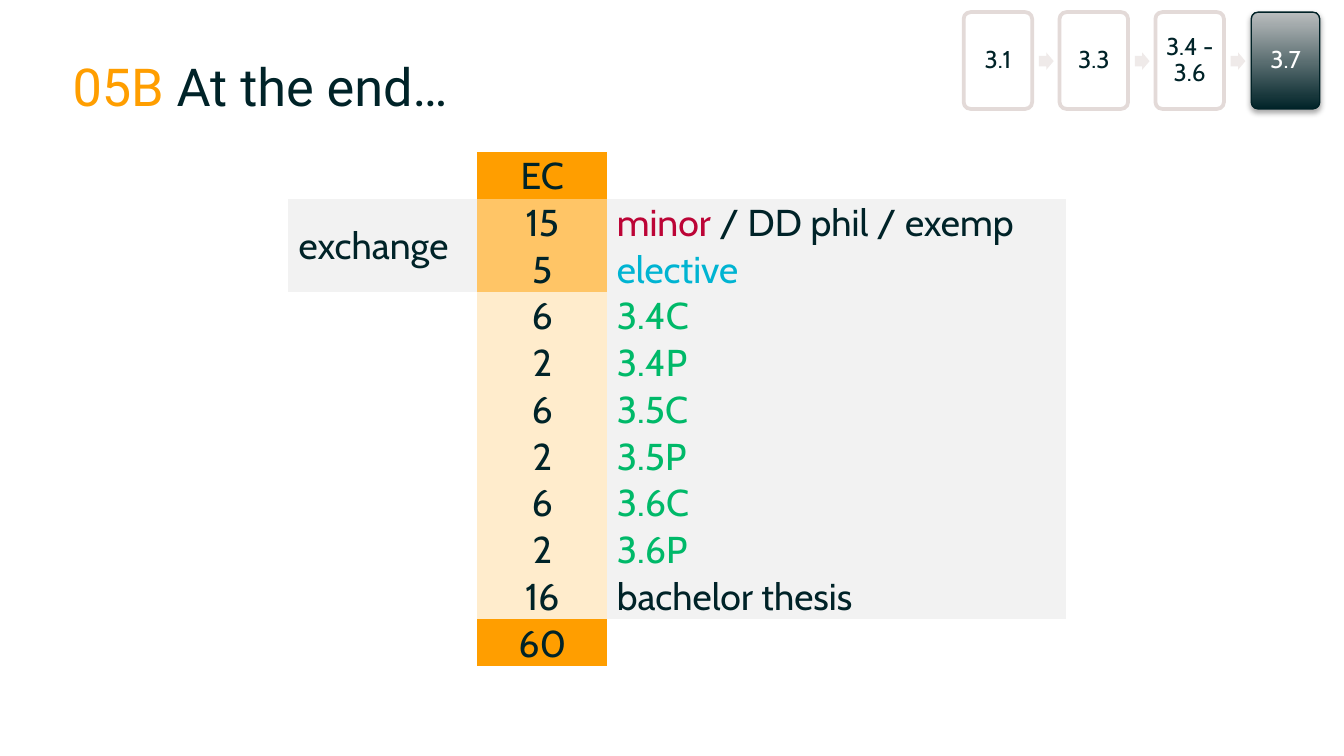
from typing import NamedTuple

from pptx import Presentation
from pptx.dml.color import RGBColor
from pptx.enum.shapes import MSO_SHAPE
from pptx.enum.text import MSO_ANCHOR, PP_ALIGN
from pptx.oxml import parse_xml
from pptx.oxml.ns import nsdecls, qn
from pptx.util import Inches, Pt

ROUNDED = MSO_SHAPE.ROUNDED_RECTANGLE
ARROW = MSO_SHAPE.RIGHT_ARROW
CENTER, LEFT = PP_ALIGN.CENTER, PP_ALIGN.LEFT
MIDDLE, BOTTOM = MSO_ANCHOR.MIDDLE, MSO_ANCHOR.BOTTOM

INK, ORANGE, AMBER, CREAM = "002328", "FF9E00", "FFC566", "FFECCC"
GREY, WHITE = "F2F2F2", "FFFFFF"
RED, BLUE, GREEN = "BC0436", "00B4D2", "00B969"
NO_STYLE_NO_GRID = "{2D5ABB26-0587-4C30-8999-92F81FD0307C}"

SLIDE_WIDTH = 10
STEP_LEFT, LAST_STEP_LEFT = 7.17, 9.31
COLUMN_WIDTHS = (1.41, 0.97, 3.41)
TABLE_HEIGHT = 3.76


class Span(NamedTuple):
    text: str
    color: str = INK


class Credit(NamedTuple):
    points: str
    fill: str
    course: tuple[Span, ...] = ()


STEPS = ("3.1", "3.3", "3.4 - 3.6", "3.7")
CURRENT_STEP = "3.7"

CREDITS = (
    Credit("EC", ORANGE),
    Credit("15", AMBER, (Span("minor", RED), Span(" / DD phil / exemp"))),
    Credit("5", AMBER, (Span("elective", BLUE),)),
    *(
        Credit(points, CREAM, (Span(f"3.{unit}{kind}", GREEN),))
        for unit in (4, 5, 6)
        for points, kind in (("6", "C"), ("2", "P"))
    ),
    Credit("16", CREAM, (Span("bachelor thesis"),)),
    Credit("60", ORANGE),
)


def rgb(color: str) -> RGBColor:
    return RGBColor.from_string(color)


def write(paragraph, spans: tuple[Span, ...], font: str, size: float) -> None:
    for span in spans:
        run = paragraph.add_run()
        run.text = span.text
        run.font.color.rgb = rgb(span.color)
    paragraph.font.name = font
    paragraph.font.size = Pt(size)


def set_margins(target, left: float, top: float, right: float, bottom: float) -> None:
    target.margin_left, target.margin_top = Inches(left), Inches(top)
    target.margin_right, target.margin_bottom = Inches(right), Inches(bottom)


def add_title(slide) -> None:
    frame = slide.shapes.add_textbox(
        Inches(0.54), Inches(0.43), Inches(8.94), Inches(0.63)
    ).text_frame
    frame.word_wrap = True
    set_margins(frame, 0, 0, 0, 0)
    heading = frame.paragraphs[0]
    heading.line_spacing = Pt(32)
    write(heading, (Span("05B", ORANGE), Span(" At the end…")), "Roboto", 28)


def highlight(card) -> None:
    """Give the current step its gradient, dark line and soft shadow."""
    card.fill.gradient()
    card.fill.gradient_angle = 90
    for stop, color in zip(card.fill.gradient_stops, (INK, "BBBEBF")):
        stop.color.rgb = rgb(color)
    card.line.color.rgb = rgb("002227")
    card.line.width = Pt(0.75)
    effects = card._element.spPr.find(qn("a:effectLst"))
    effects.append(parse_xml(
        f'<a:outerShdw {nsdecls("a")} blurRad="{Pt(3.1)}" dist="{Pt(1.8)}" '
        'dir="5400000" rotWithShape="0"><a:srgbClr val="000000">'
        '<a:alpha val="35000"/></a:srgbClr></a:outerShdw>'
    ))


def add_step(slide, left: float, label: str) -> None:
    card = slide.shapes.add_shape(
        ROUNDED, Inches(left), Inches(0.09), Inches(0.51), Inches(0.72)
    )
    card.adjustments[0] = 0.1
    card.shadow.inherit = False
    current = label == CURRENT_STEP
    if current:
        highlight(card)
    else:
        card.fill.solid()
        card.fill.fore_color.rgb = rgb(WHITE)
        card.line.color.rgb = rgb("E3DAD8")
        card.line.width = Pt(2)
    frame = card.text_frame
    frame.word_wrap = True
    frame.vertical_anchor = MIDDLE
    set_margins(frame, 0.05, 0.05, 0.05, 0.05)
    paragraph = frame.paragraphs[0]
    paragraph.alignment = CENTER
    paragraph.line_spacing = 0.9
    write(paragraph, (Span(label, WHITE if current else INK),), "Cabin", 13)


def add_arrow(slide, left: float) -> None:
    arrow = slide.shapes.add_shape(
        ARROW, Inches(left), Inches(0.39), Inches(0.11), Inches(0.13)
    )
    arrow.adjustments[0] = 0.6
    arrow.shadow.inherit = False
    arrow.fill.solid()
    arrow.fill.fore_color.rgb = rgb("EFEAE9")
    arrow.line.fill.background()


def fill_cell(cell, spans: tuple[Span, ...], fill: str, align=CENTER,
              anchor=MIDDLE, left: float = 0.01, right: float = 0.01) -> None:
    set_margins(cell, left, 0.01, right, 0)
    cell.margin_top = Pt(1)
    cell.vertical_anchor = anchor
    paragraph = cell.text_frame.paragraphs[0]
    paragraph.alignment = align
    write(paragraph, spans, "Cabin", 20)
    if spans:
        cell.fill.solid()
        cell.fill.fore_color.rgb = rgb(fill)
    else:
        cell.fill.background()


def add_credit_table(slide) -> None:
    table = slide.shapes.add_table(
        len(CREDITS), len(COLUMN_WIDTHS), Inches(2.14), Inches(1.13),
        Inches(sum(COLUMN_WIDTHS)), Inches(TABLE_HEIGHT),
    ).table
    table.first_row = table.horz_banding = False
    table._tbl.tblPr.find(qn("a:tableStyleId")).text = NO_STYLE_NO_GRID
    for column, width in zip(table.columns, COLUMN_WIDTHS):
        column.width = Inches(width)
    table.cell(1, 0).merge(table.cell(2, 0))
    for index, credit in enumerate(CREDITS):
        period = (Span("exchange"),) if index == 1 else ()
        fill_cell(table.cell(index, 0), period, GREY, right=0.14)
        fill_cell(table.cell(index, 1), (Span(credit.points),), credit.fill)
        fill_cell(table.cell(index, 2), credit.course, GREY, LEFT, BOTTOM, left=0.07)


def main() -> None:
    deck = Presentation()
    deck.slide_width = Inches(SLIDE_WIDTH)
    deck.slide_height = Inches(SLIDE_WIDTH * 9 / 16)
    slide = deck.slides.add_slide(deck.slide_layouts[6])
    add_title(slide)
    pitch = (LAST_STEP_LEFT - STEP_LEFT) / (len(STEPS) - 1)
    for index, label in enumerate(STEPS):
        left = STEP_LEFT + index * pitch
        add_step(slide, left, label)
        if index < len(STEPS) - 1:
            add_arrow(slide, left + 0.56)
    add_credit_table(slide)
    deck.save("out.pptx")


if __name__ == "__main__":
    main()
